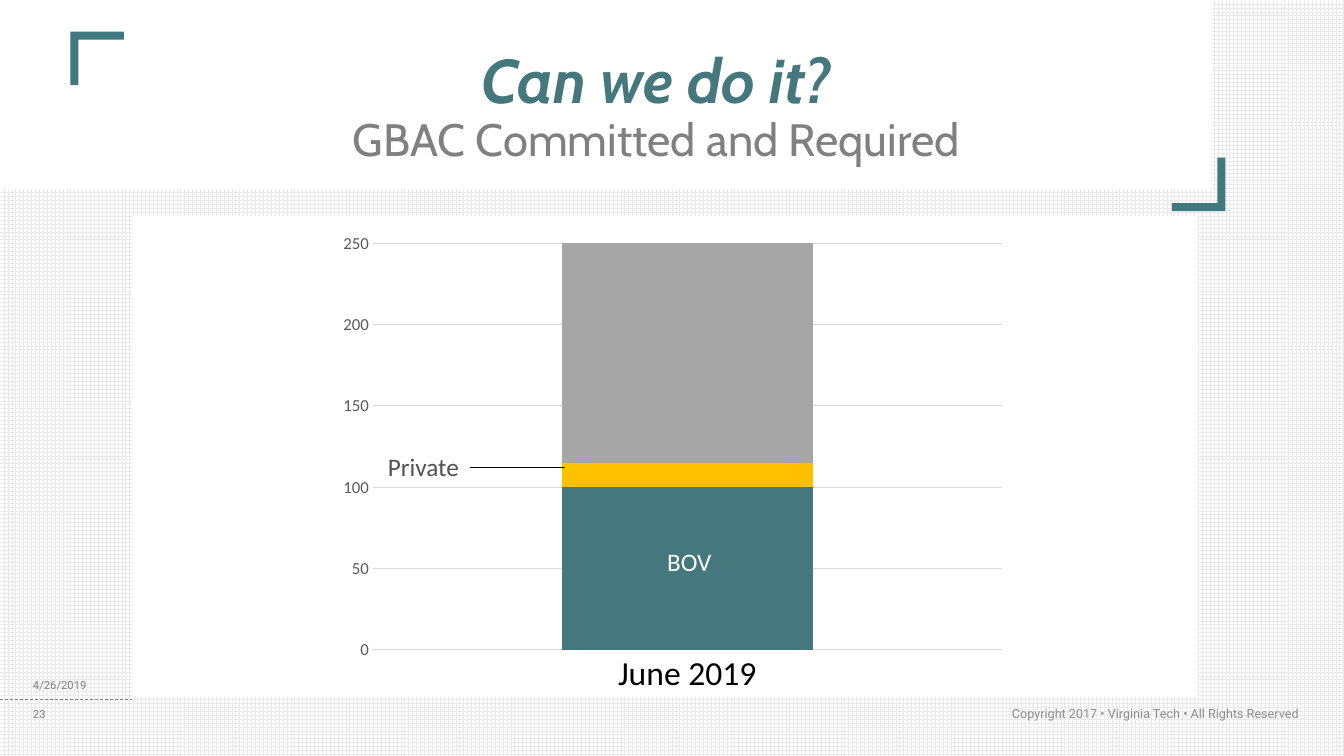
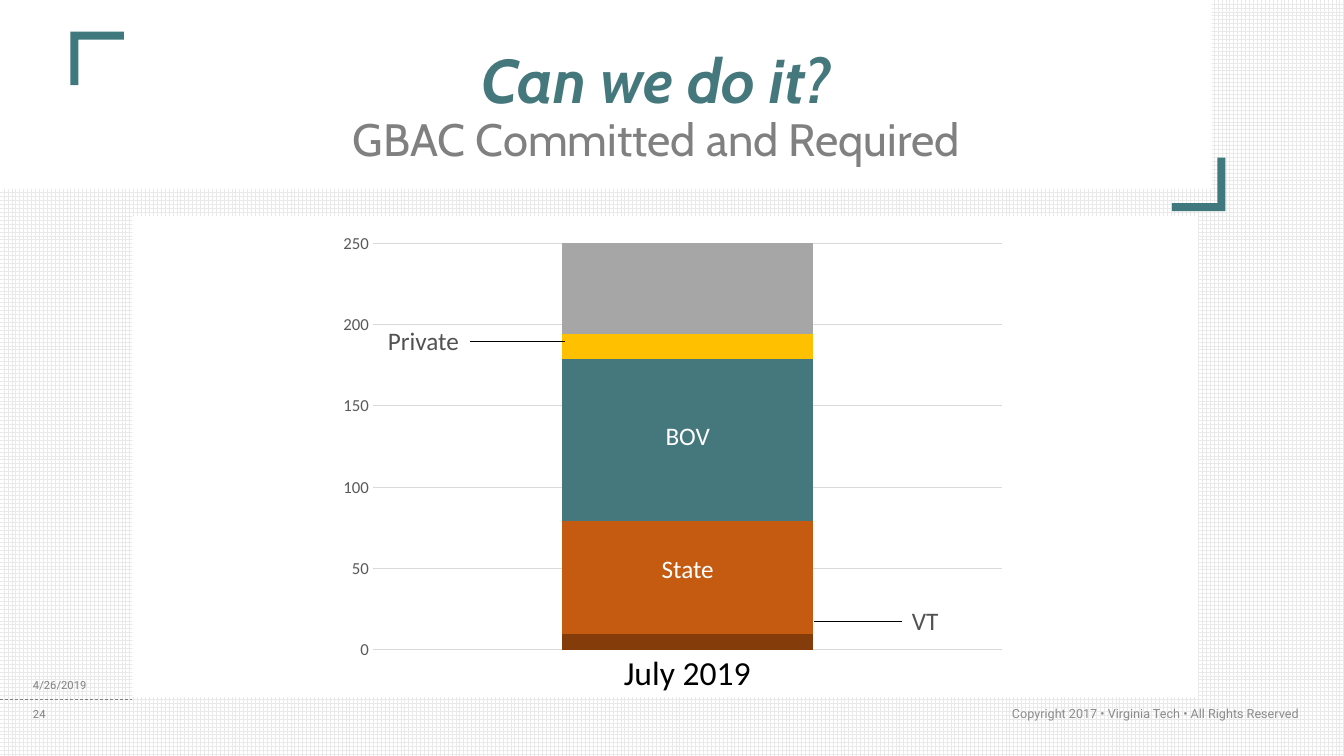
from typing import NamedTuple, Optional

from lxml.etree import SubElement
from pptx import Presentation
from pptx.chart.data import CategoryChartData
from pptx.dml.color import RGBColor
from pptx.enum.chart import XL_CHART_TYPE, XL_TICK_MARK
from pptx.enum.dml import MSO_LINE, MSO_PATTERN
from pptx.enum.shapes import MSO_CONNECTOR, MSO_SHAPE
from pptx.enum.text import MSO_ANCHOR, MSO_AUTO_SIZE, PP_ALIGN
from pptx.oxml.ns import qn
from pptx.util import Emu, Pt

EMU_PER_PX = 9525
TEAL, GOLD, SILVER = "44787D", "FFC000", "A6A6A6"
ORANGE, BROWN = "C55A11", "843C0B"
WHITE, BLACK, GREY, LABEL_GREY = "FFFFFF", "000000", "808080", "525252"
GRID, AXIS_GREY, BRACKET, COPYRIGHT_GREY = "D9D9D9", "595959", "3F787D", "8C8C8C"
LABEL_WIDTH, LABEL_HEIGHT = 88, 38


class Box(NamedTuple):
    left: int
    top: int
    width: int
    height: int


class Panel(NamedTuple):
    box: Box
    color: str
    kind: MSO_SHAPE = MSO_SHAPE.RECTANGLE
    rotation: int = 0


class Funding(NamedTuple):
    amount: int
    color: str


class Label(NamedTuple):
    name: str
    left: int
    top: int
    color: str = WHITE
    align: PP_ALIGN = PP_ALIGN.CENTER
    leader_from: int = 0
    leader_to: Optional[int] = None


class Month(NamedTuple):
    name: str
    number: str
    stack: list[Funding]
    labels: list[Label]


PANELS = [
    Panel(Box(126, 206, 1015, 458), WHITE),
    Panel(Box(0, 0, 1154, 180), WHITE),
    Panel(Box(1116, 150, 51, 51), BRACKET, MSO_SHAPE.CORNER, 270),
    Panel(Box(67, 30, 51, 51), BRACKET, MSO_SHAPE.CORNER, 90),
]


def private_label(top: int) -> Label:
    return Label("Private", 360, top, LABEL_GREY, PP_ALIGN.LEFT, 448, 538)


MONTHS = [
    Month("June 2019", "23",
          [Funding(100, TEAL), Funding(15, GOLD), Funding(135, SILVER)],
          [private_label(425), Label("BOV", 626, 516, align=PP_ALIGN.LEFT)]),
    Month("July 2019", "24",
          [Funding(10, BROWN), Funding(69, ORANGE), Funding(100, TEAL),
           Funding(15, GOLD), Funding(56, SILVER)],
          [Label("BOV", 611, 396), Label("State", 611, 522), private_label(305),
           Label("VT", 859, 572, LABEL_GREY, PP_ALIGN.LEFT, 859, 775)]),
]


def px(length: int) -> Emu:
    return Emu(length * EMU_PER_PX)


def rgb(color: str) -> RGBColor:
    return RGBColor.from_string(color)


def set_font(font, name: str, size: float, color: str) -> None:
    font.name, font.size = name, Pt(size)
    font.color.rgb = rgb(color)


def add_panel(slide, panel: Panel):
    shape = slide.shapes.add_shape(panel.kind, *map(px, panel.box))
    shape.shadow.inherit = False
    shape.fill.solid()
    shape.fill.fore_color.rgb = rgb(panel.color)
    shape.line.fill.background()
    shape.rotation = panel.rotation
    if panel.kind == MSO_SHAPE.CORNER:
        shape.adjustments[0], shape.adjustments[1] = 0.15, 0.15
    return shape


def add_line(slide, start: tuple[int, int], end: tuple[int, int], color: str):
    line = slide.shapes.add_connector(MSO_CONNECTOR.STRAIGHT, *map(px, start + end))
    line.line.color.rgb = rgb(color)
    line.line.width = Pt(0.5)
    SubElement(line.element.spPr, qn("a:effectLst"))
    return line


def add_text(slide, box: Box, text: str, font: str, size: float, color: str,
             align: PP_ALIGN = PP_ALIGN.LEFT,
             anchor: MSO_ANCHOR = MSO_ANCHOR.MIDDLE):
    frame = slide.shapes.add_textbox(*map(px, box)).text_frame
    frame.word_wrap = True
    frame.vertical_anchor = anchor
    frame.text = text
    paragraph = frame.paragraphs[0]
    paragraph.alignment = align
    set_font(paragraph.runs[0].font, font, size, color)
    return frame


def build_layout(layout, slide) -> None:
    """Draw the shared frame on the slide, then move it into its layout."""
    fill = layout.background.fill
    fill.patterned()
    fill.pattern = MSO_PATTERN.LARGE_GRID
    fill.fore_color.rgb = rgb("E9E9E9")
    fill.back_color.rgb = rgb(WHITE)
    frame_parts = [add_panel(slide, panel) for panel in PANELS]
    date_rule = add_line(slide, (0, 666), (126, 666), GREY)
    date_rule.line.dash_style = MSO_LINE.DASH
    frame_parts.append(date_rule)
    for shape_id, part in enumerate(frame_parts, start=20):
        part.element.xpath("./*/p:cNvPr")[0].set("id", str(shape_id))
        layout.element.cSld.spTree.append(part.element)


def set_title(slide) -> None:
    title = slide.shapes.title
    title.left, title.top, title.width, title.height = map(px, (0, 27, 1154, 152))
    frame = title.text_frame
    frame.text = "Can we do it?\vGBAC Committed and Required"
    frame.word_wrap = True
    frame.auto_size = MSO_AUTO_SIZE.NONE
    frame.vertical_anchor = MSO_ANCHOR.MIDDLE
    frame.margin_left = px(125)
    frame.margin_top = frame.margin_right = frame.margin_bottom = px(29)
    paragraph = frame.paragraphs[0]
    paragraph.alignment = PP_ALIGN.CENTER
    paragraph.line_spacing = 0.9
    question, subject = paragraph.runs
    set_font(question.font, "Cabin", 44.1, TEAL)
    question.font.bold = question.font.italic = True
    set_font(subject.font, "Cabin", 32.4, GREY)


def add_footer(slide, number: str) -> None:
    add_text(slide, Box(824, 665, 422, 28),
             "Copyright 2017 • Virginia Tech • All Rights Reserved",
             "Roboto", 9, COPYRIGHT_GREY, PP_ALIGN.RIGHT)
    for text, top in (("4/26/2019", 633), (number, 661)):
        add_text(slide, Box(22, top, 105, 38), text, "Roboto", 8, GREY)


def add_funding_chart(slide, month: Month) -> None:
    data = CategoryChartData()
    data.categories = [month.name]
    for position, funding in enumerate(month.stack, start=1):
        data.add_series(f"Series {position}", [funding.amount])
    chart = slide.shapes.add_chart(XL_CHART_TYPE.COLUMN_STACKED,
                                   *map(px, Box(314, 213, 653, 458)), data).chart
    chart.has_legend = chart.has_title = False
    set_font(chart.font, "Calibri", 10, BLACK)

    plot = chart.plots[0]
    plot.gap_width, plot.overlap = 150, 100
    plot.vary_by_categories = False
    for series, funding in zip(plot.series, month.stack):
        series.format.fill.solid()
        series.format.fill.fore_color.rgb = rgb(funding.color)

    months, amounts = chart.category_axis, chart.value_axis
    for axis, size, color in ((months, 24, BLACK), (amounts, 12, AXIS_GREY)):
        axis.major_tick_mark = axis.minor_tick_mark = XL_TICK_MARK.NONE
        set_font(axis.tick_labels.font, "Calibri", size, color)
    amounts.minimum_scale, amounts.maximum_scale, amounts.major_unit = 0, 250, 50
    amounts.has_major_gridlines = True
    amounts.format.line.fill.background()
    for line in (months.format.line, amounts.major_gridlines.format.line):
        line.color.rgb = rgb(GRID)
        line.width = Pt(0.75)


def add_label(slide, label: Label) -> None:
    box = Box(label.left, label.top, LABEL_WIDTH, LABEL_HEIGHT)
    frame = add_text(slide, box, label.name, "Calibri", 18, label.color,
                     label.align, MSO_ANCHOR.TOP)
    frame.auto_size = MSO_AUTO_SIZE.SHAPE_TO_FIT_TEXT
    if label.leader_to is not None:
        height = label.top + 20
        add_line(slide, (label.leader_from, height), (label.leader_to, height), BLACK)


def main() -> None:
    deck = Presentation()
    deck.slide_width, deck.slide_height = px(1280), px(720)
    layout = deck.slide_layouts.get_by_name("Title Only")
    for position, month in enumerate(MONTHS):
        slide = deck.slides.add_slide(layout)
        if position == 0:
            build_layout(layout, slide)
        set_title(slide)
        add_footer(slide, month.number)
        add_funding_chart(slide, month)
        for label in month.labels:
            add_label(slide, label)
    deck.save("out.pptx")


if __name__ == "__main__":
    main()
